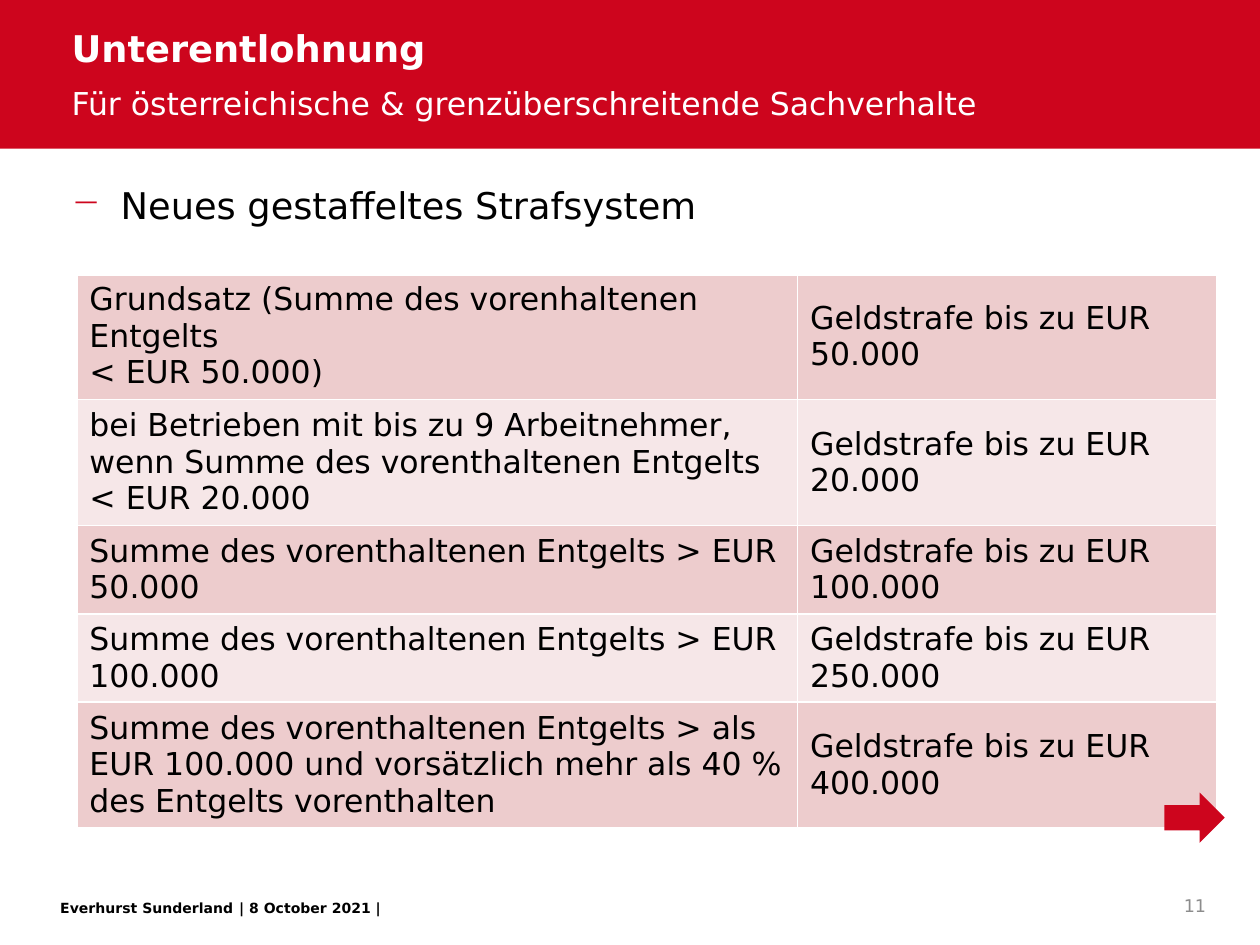
"""Build the slide on the graded penalties for underpayment."""
import pptx
import pptx.util
import pptx.dml.color
import pptx.enum.shapes
import pptx.enum.text
import pptx.oxml
import pptx.oxml.ns
import lxml.etree

Inches = pptx.util.Inches
Pt = pptx.util.Pt
RGBColor = pptx.dml.color.RGBColor
ANCHOR = pptx.enum.text.MSO_ANCHOR
ALIGN = pptx.enum.text.PP_ALIGN
SHAPE = pptx.enum.shapes.MSO_SHAPE

FONT = "DejaVu Sans"
RED = RGBColor(0xCD, 0x05, 0x1D)
BLACK = RGBColor(0, 0, 0)
WHITE = RGBColor(0xFF, 0xFF, 0xFF)
GREY = RGBColor(0x8C, 0x8C, 0x8C)
ROSE = RGBColor(0xED, 0xCC, 0xCD)
PALE = RGBColor(0xF6, 0xE7, 0xE8)


def add_span(para, text, size, color, bold=False):
    span = para.add_run()
    span.text = text
    span.font.name = FONT
    span.font.size = Pt(size)
    span.font.bold = bold
    span.font.color.rgb = color


def add_text(place, text, size, color, bold=False, anchor=ANCHOR.TOP, wrap=True):
    box = page.shapes.add_textbox(*map(Inches, place))
    box.text_frame.word_wrap = wrap
    box.text_frame.vertical_anchor = anchor
    para = box.text_frame.paragraphs[0]
    add_span(para, text, size, color, bold)
    return para


deck = pptx.Presentation()
deck.slide_width, deck.slide_height = Inches(10), Inches(7.5)
page = deck.slides.add_slide(deck.slide_layouts[6])

for kind, place in [
    (SHAPE.RECTANGLE, (0, 0, 10, 1.18)),
    (SHAPE.RIGHT_ARROW, (9.24, 6.29, 0.48, 0.4)),
]:
    shape = page.shapes.add_shape(kind, *map(Inches, place))
    shape.shadow.inherit = False
    shape.fill.solid()
    shape.fill.fore_color.rgb = RED
    shape.line.fill.background()
arrow = shape

title = add_text((0.47, 0.19, 7.87, 0.42), "Unterentlohnung", 21, WHITE, True, ANCHOR.MIDDLE)
title.line_spacing = 0.9
add_text((0.47, 0.62, 9.45, 0.4),
         "Für österreichische & grenzüberschreitende Sachverhalte", 18, WHITE)

bullet = add_text((0.47, 1.4, 9.06, 0.49), "Neues gestaffeltes Strafsystem", 21, BLACK)
bullet.space_after = Pt(6)
props = bullet._p.get_or_add_pPr()
props.set("marL", str(Inches(0.39)))
props.set("indent", str(-Inches(0.39)))
bullet_color = lxml.etree.SubElement(props, pptx.oxml.ns.qn("a:buClr"))
lxml.etree.SubElement(bullet_color, pptx.oxml.ns.qn("a:srgbClr"), val=str(RED))
lxml.etree.SubElement(props, pptx.oxml.ns.qn("a:buChar"), char="─")

add_text((0.38, 7.09, 1.73, 0.24), "Everhurst Sunderland", 8, BLACK, True, wrap=False)
add_text((1.8, 7.09, 1.64, 0.24), "| 8 October 2021 |", 8, BLACK, True, wrap=False)
number = add_text((8.8, 7.04, 0.87, 0.3), "11", 10, GREY, anchor=ANCHOR.MIDDLE)
number.alignment = ALIGN.RIGHT

penalties = [
    (0.33, [], ""),
    (0.96, ["Grundsatz (Summe des vorenhaltenen Entgelts", "< EUR 50.000)"], "50.000"),
    (0.97, ["bei Betrieben mit bis zu 9 Arbeitnehmer, wenn Summe des "
            "vorenthaltenen Entgelts < EUR 20.000"], "20.000"),
    (0.68, ["Summe des vorenthaltenen Entgelts > EUR 50.000"], "100.000"),
    (0.68, ["Summe des vorenthaltenen Entgelts > EUR 100.000"], "250.000"),
    (0.97, ["Summe des vorenthaltenen Entgelts > als EUR 100.000 und vorsätzlich "
            "mehr als 40 % des Entgelts vorenthalten"], "400.000"),
]
frame = page.shapes.add_table(len(penalties), 2, Inches(0.61), Inches(1.84),
                              Inches(9.05), Inches(4.59))
table = frame.table
table.columns[0].width, table.columns[1].width = Inches(5.72), Inches(3.33)

for index, (height, offence, amount) in enumerate(penalties):
    table.rows[index].height = Inches(height)
    fine = [f"Geldstrafe bis zu EUR {amount}"] if amount else []
    for column, lines in enumerate((offence, fine)):
        cell = table.cell(index, column)
        cell.vertical_anchor = ANCHOR.MIDDLE
        if not lines:
            cell.margin_top = cell.margin_bottom = 0
        for position, line in enumerate(lines):
            body = cell.text_frame
            para = body.add_paragraph() if position else body.paragraphs[0]
            add_span(para, line, 18, BLACK)
        for side in ("lnL", "lnR", "lnT", "lnB"):
            thick = (index, side) in ((0, "lnB"), (1, "lnT"))
            border = lxml.etree.SubElement(
                cell._tc.get_or_add_tcPr(), pptx.oxml.ns.qn(f"a:{side}"),
                w=str(Pt(3 if thick else 1)))
            paint = lxml.etree.SubElement(border, pptx.oxml.ns.qn("a:solidFill"))
            lxml.etree.SubElement(paint, pptx.oxml.ns.qn("a:srgbClr"), val=str(WHITE))
        cell.fill.solid()
        cell.fill.fore_color.rgb = WHITE if index == 0 else (PALE, ROSE)[index % 2]

page.shapes._spTree.append(arrow._element)
deck.save("out.pptx")
